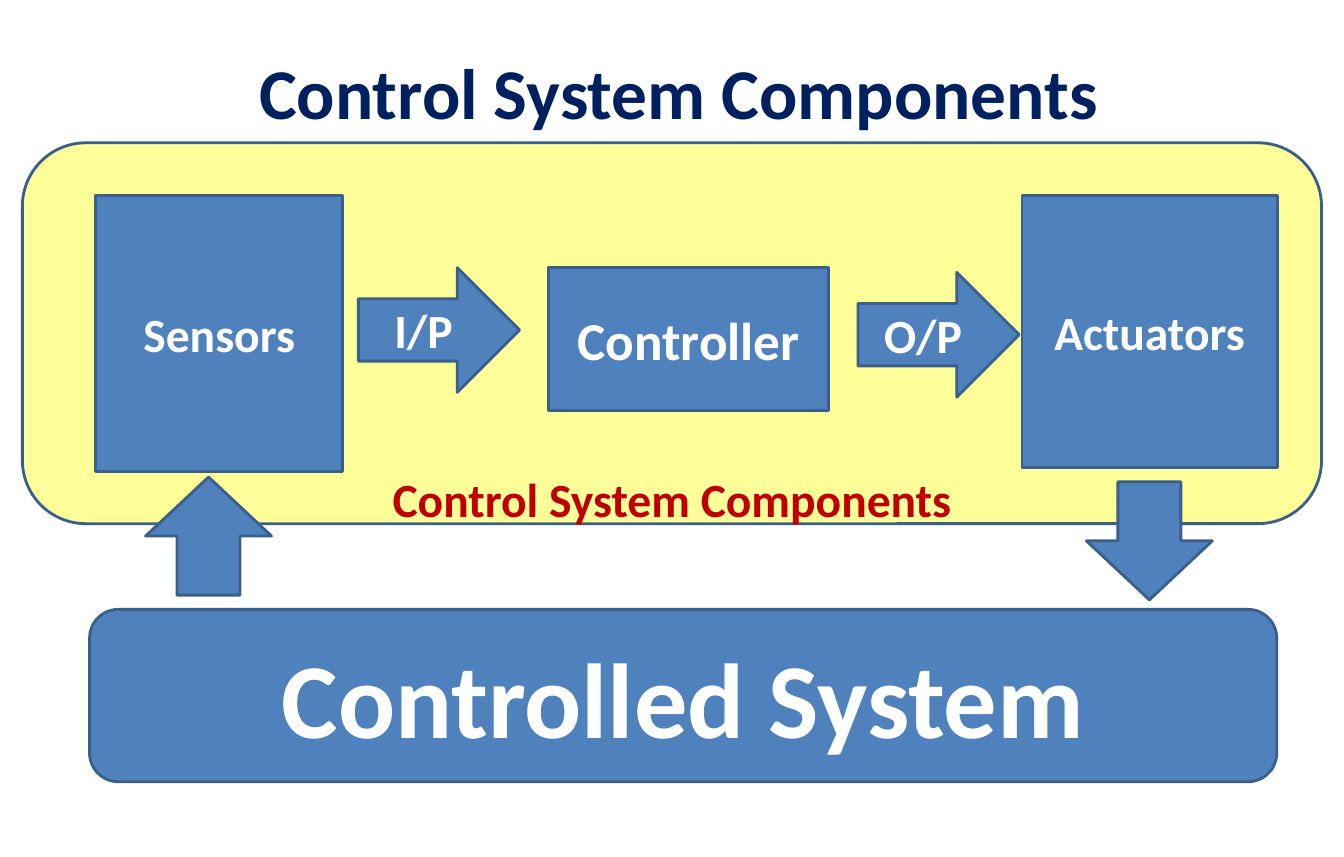
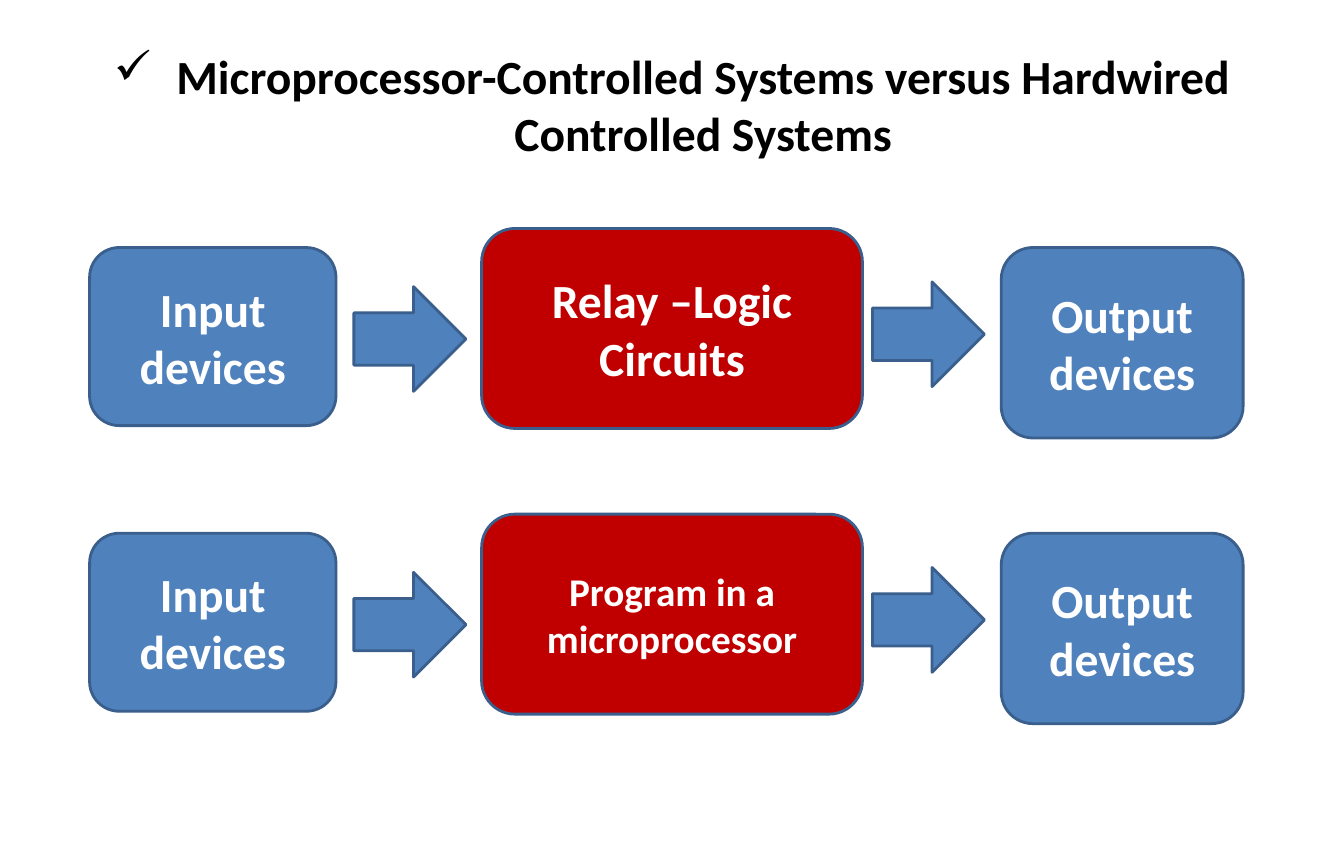
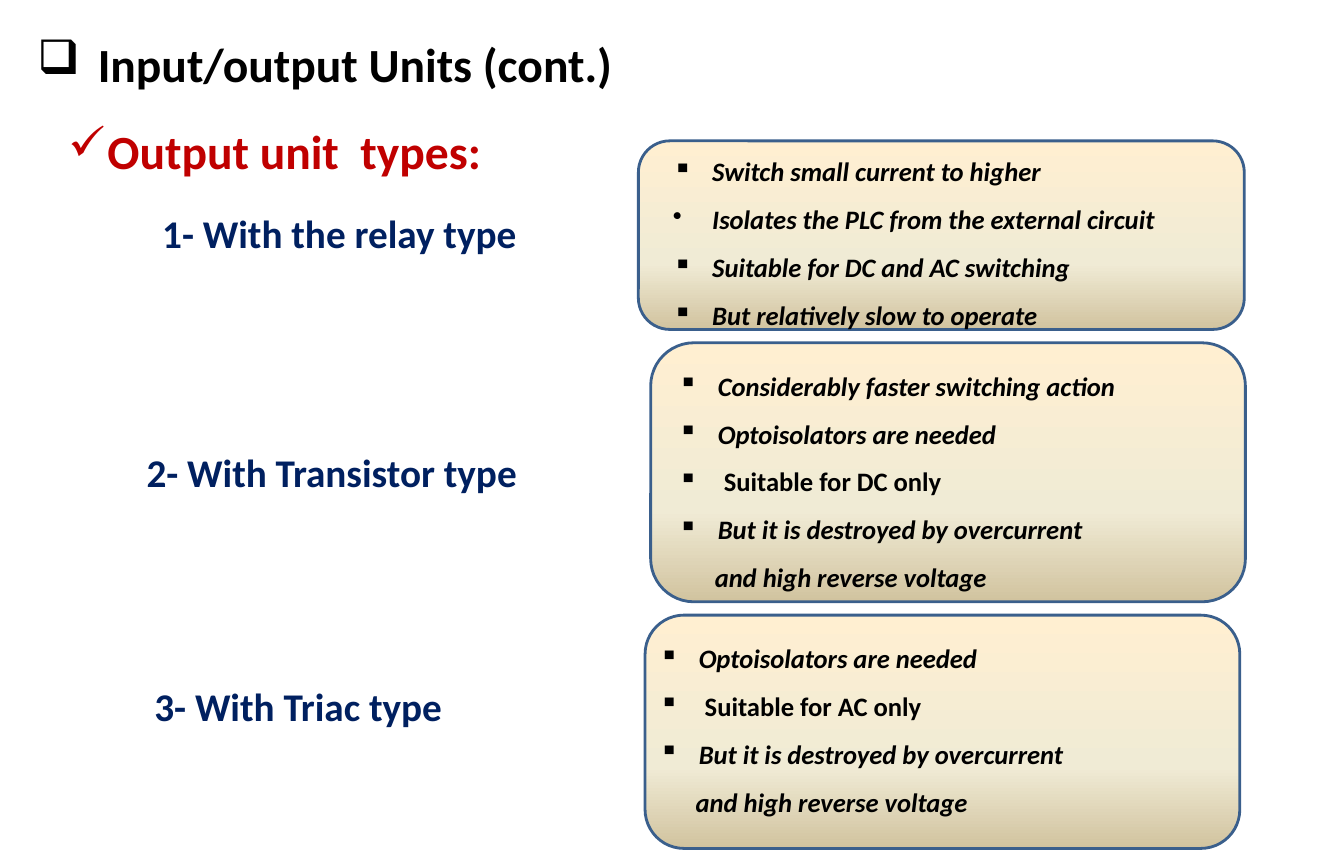
from dataclasses import dataclass
from typing import NamedTuple

from lxml.etree import SubElement
from pptx import Presentation
from pptx.dml.color import RGBColor
from pptx.enum.shapes import MSO_SHAPE as Shape
from pptx.enum.text import MSO_ANCHOR as Anchor, MSO_AUTO_SIZE as AutoSize, PP_ALIGN as Align
from pptx.oxml.ns import qn
from pptx.util import Inches, Pt

# Shared look
FONT = "Calibri"
COLORS = {
    "blue": "4F81BD", "edge": "3A5F8C", "yellow": "FFFF99", "red": "C00000",
    "navy": "002060", "black": "000000", "white": "FFFFFF",
}
CARD_STOPS = ((0, "FFEFD1"), (65, "F0EBD5"), (100, "D1C39F"))
WIDTH, HEIGHT = Inches(13.33), Inches(8.5)
COLUMNS, ROWS = 120, 90
HEAD_SIZE, LABEL_SIZE, LIST_SIZE = 34, 28, 19
HANG = 0.39


class Cell(NamedTuple):
    """Left, top, width and height in grid columns and rows."""
    col: float
    row: float
    cols: float
    rows: float

    def down(self, rows: float) -> "Cell":
        return self._replace(row=self.row + rows)

    def emu(self) -> tuple:
        return (int(WIDTH * self.col / COLUMNS), int(HEIGHT * self.row / ROWS),
                int(WIDTH * self.cols / COLUMNS), int(HEIGHT * self.rows / ROWS))


@dataclass
class Style:
    size: float = HEAD_SIZE
    color: str = "white"
    align: Align = Align.CENTER
    anchor: Anchor = Anchor.MIDDLE
    wrap: bool = True
    italic: bool = False
    spacing: float | None = None


@dataclass
class Para:
    text: str
    bullet: str = ""
    margin: float = 0
    upright: bool = False


@dataclass
class Block:
    cell: Cell
    kind: Shape
    text: str = ""
    fill: str = "blue"
    size: float = HEAD_SIZE


@dataclass
class OutputType:
    label: str
    label_at: tuple
    card: Cell
    points_at: Cell
    points: list


def rgb(name: str) -> RGBColor:
    return RGBColor.from_string(COLORS[name])


def write(tf, paras: list, style: Style) -> None:
    """Fill a text frame with formatted paragraphs."""
    tf.word_wrap, tf.auto_size = style.wrap, AutoSize.NONE
    tf.vertical_anchor = style.anchor
    tf.margin_left = tf.margin_right = Inches(0.12)
    tf.margin_top = tf.margin_bottom = Inches(0.06)
    for i, para in enumerate(paras):
        p = tf.add_paragraph() if i else tf.paragraphs[0]
        p.alignment = style.align
        if style.spacing:
            p.line_spacing = style.spacing
        if para.margin:
            pPr = p._p.get_or_add_pPr()
            pPr.set("marL", str(Inches(para.margin)))
            pPr.set("indent", str(-Inches(para.margin) if para.bullet else 0))
            if para.bullet:
                SubElement(pPr, qn("a:buChar"), char=para.bullet)
        r = p.add_run()
        r.text = para.text
        r.font.name, r.font.size, r.font.bold = FONT, Pt(style.size), True
        r.font.italic = style.italic and not para.upright
        r.font.color.rgb = rgb(style.color)


def add_titled_slide(prs, cell: Cell, para: Para, style: Style):
    s = prs.slides.add_slide(prs.slide_layouts[5])
    title = s.shapes.title
    title.left, title.top, title.width, title.height = cell.emu()
    write(title.text_frame, [para], style)
    return s


def add_text(s, cell: Cell, paras: list, style: Style) -> None:
    write(s.shapes.add_textbox(*cell.emu()).text_frame, paras, style)


def add_block(s, block: Block) -> None:
    sp = s.shapes.add_shape(block.kind, *block.cell.emu())
    sp.shadow.inherit = False
    if block.fill == "card":
        sp.fill.gradient()
        sp.fill.gradient_angle = 270
        stops = sp._element.spPr.find(".//" + qn("a:gsLst"))
        stops.clear()
        for share, color in CARD_STOPS:
            stop = SubElement(stops, qn("a:gs"), pos=str(share * 1000))
            SubElement(stop, qn("a:srgbClr"), val=color)
    else:
        sp.fill.solid()
        sp.fill.fore_color.rgb = rgb(block.fill)
    sp.line.color.rgb, sp.line.width = rgb("edge"), Pt(2)
    if block.text:
        write(sp.text_frame, [Para(block.text)], Style(block.size))


def build_components(prs) -> None:
    s = add_titled_slide(prs, Cell(6.6, 2, 108, 15), Para("Control System Components"),
                         Style(51, "navy"))
    # Panel and its caption
    add_block(s, Block(Cell(2, 15, 116, 40), Shape.ROUNDED_RECTANGLE, fill="yellow"))
    add_text(s, Cell(2, 48.6, 116, 7.4), [Para("Control System Components")],
             Style(color="red"))
    # Signal loop
    for block in (
        Block(Cell(13, 50.1, 11.25, 12.4), Shape.UP_ARROW),
        Block(Cell(97, 50.6, 11.25, 12.4), Shape.DOWN_ARROW),
        Block(Cell(8, 64, 106, 18.1), Shape.ROUNDED_RECTANGLE, "Controlled System", size=76),
        Block(Cell(8.55, 20.5, 22.05, 29), Shape.RECTANGLE, "Sensors"),
        Block(Cell(49, 28.1, 25, 15), Shape.RECTANGLE, "Controller", size=38),
        Block(Cell(91.25, 20.5, 22.8, 28.6), Shape.RECTANGLE, "Actuators"),
        Block(Cell(32, 28.1, 14.4, 13.1), Shape.RIGHT_ARROW, "I/P"),
        Block(Cell(76.6, 28.6, 14.4, 13.1), Shape.RIGHT_ARROW, "O/P"),
    ):
        add_block(s, block)


def build_comparison(prs) -> None:
    text = "Microprocessor-Controlled Systems versus Hardwired Controlled Systems"
    s = add_titled_slide(prs, Cell(6, 4.9, 108, 12), Para(text, "✓", 0.62),
                         Style(color="black"))
    # One chain per kind of control
    chains = (("Relay –Logic Circuits", HEAD_SIZE), ("Program in a microprocessor", LABEL_SIZE))
    box, arrow = Shape.ROUNDED_RECTANGLE, Shape.RIGHT_ARROW
    for i, (control, size) in enumerate(chains):
        drop = 30 * i
        for block in (
            Block(Cell(8, 26, 22, 18.7).down(drop), box, "Input devices"),
            Block(Cell(43, 24, 34, 21).down(drop), box, control, "red", size),
            Block(Cell(31.6, 30.1, 10, 11).down(drop), arrow),
            Block(Cell(89.4, 26, 21.6, 20).down(drop), box, "Output devices"),
            Block(Cell(77.9, 29.6, 10, 11).down(drop), arrow),
        ):
            add_block(s, block)


def point(text: str, bullet: str = "▪", upright: bool = False) -> Para:
    return Para(text, bullet, HANG, upright)


def build_output_units(prs) -> None:
    head = Style(color="black", align=Align.LEFT, anchor=Anchor.TOP, wrap=False)
    s = add_titled_slide(prs, Cell(2.25, 3, 54.5, 7.4),
                         Para("Input/output Units (cont.)", "❑", 0.6), head)
    add_text(s, Cell(5, 12.2, 39.5, 7.4), [Para("Output unit  types:", "✓", HANG)],
             Style(color="red", align=Align.LEFT, anchor=Anchor.TOP, wrap=False))
    # Types with their properties
    drawback = [point("But it is destroyed by overcurrent"),
                Para("and high reverse voltage", margin=0.36)]
    isolators = point("Optoisolators are needed")
    types = (
        OutputType("1- With the relay type", (13.4, 21.3),
                   Cell(57, 14.8, 54.1, 19.8), Cell(59, 14, 55, 21.6),
                   [point("Switch small current to higher"),
                    point("Isolates the PLC from the external circuit", "•"),
                    point("Suitable for DC and AC switching"),
                    point("But relatively slow to operate")]),
        OutputType("2- With Transistor type", (12, 46.4),
                   Cell(58.1, 36, 53.1, 27.2), Cell(59.5, 36.5, 54, 26.7),
                   [point("Considerably faster switching action"), isolators,
                    point(" Suitable for DC only", upright=True), *drawback]),
        OutputType("3- With Triac type", (12.7, 71),
                   Cell(57.6, 64.6, 53.1, 24.5), Cell(57.8, 65.1, 54, 21.6),
                   [isolators, point(" Suitable for AC only", upright=True), *drawback]),
    )
    label = Style(LABEL_SIZE, "navy", Align.LEFT, Anchor.TOP, wrap=False)
    points = Style(LIST_SIZE, "black", Align.LEFT, Anchor.TOP, italic=True, spacing=1.5)
    for kind in types:
        add_text(s, Cell(*kind.label_at, 36, 6.4), [Para(kind.label)], label)
        add_block(s, Block(kind.card, Shape.ROUNDED_RECTANGLE, fill="card"))
        add_text(s, kind.points_at, kind.points, points)


def main() -> None:
    prs = Presentation()
    prs.slide_width, prs.slide_height = WIDTH, HEIGHT
    build_components(prs)
    build_comparison(prs)
    build_output_units(prs)
    prs.save("out.pptx")


if __name__ == "__main__":
    main()
